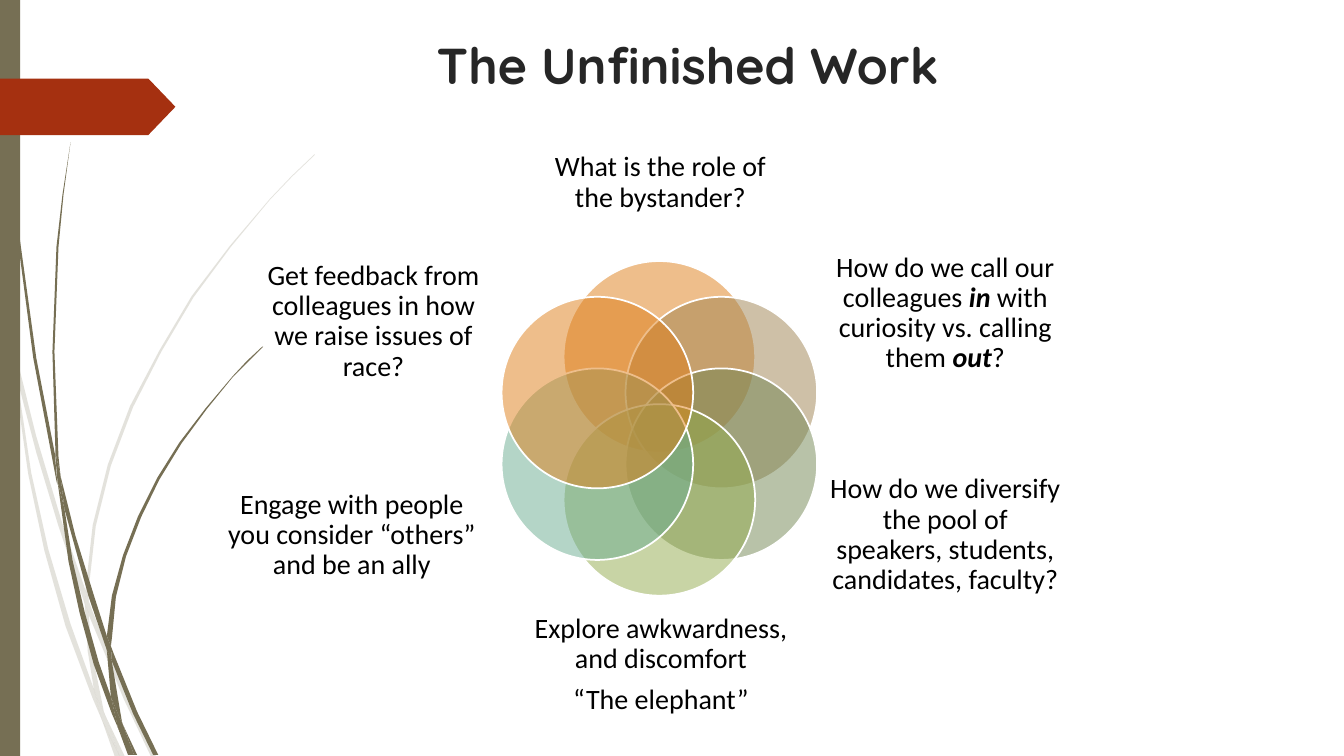
import math

from lxml import etree
from pptx import Presentation
from pptx.dml.color import RGBColor
from pptx.enum.shapes import MSO_SHAPE
from pptx.enum.text import MSO_ANCHOR, MSO_AUTO_SIZE, PP_ALIGN
from pptx.oxml.ns import qn
from pptx.util import Inches, Pt

RECTANGLE, PENTAGON, OVAL = MSO_SHAPE.RECTANGLE, MSO_SHAPE.PENTAGON, MSO_SHAPE.OVAL
TOP, MIDDLE = MSO_ANCHOR.TOP, MSO_ANCHOR.MIDDLE
CENTER, NO_FIT = PP_ALIGN.CENTER, MSO_AUTO_SIZE.NONE
TITLE_ONLY = 5

COLORS = {
    "stem": "766F54", "banner": "A53010", "title": "262626",
    "text": "000000", "outline": "FFFFFF", "orange": "DE7E18",
    "tan": "9F8351", "moss": "728653", "lime": "92AA4C", "teal": "6AAC91",
}

# Outlines of the grass blades, in inches.
PALE_BLADES = [
    [(.11, 3.5), (.09, 3.22), (0, 2.82), (0, 2.99), (.1, 3.44)],
    [(.58, 5.22), (.84, 5.99), (.85, 5.86), (.62, 5.2), (.36, 4.33), (.14, 3.45),
     (.17, 3.76), (.36, 4.49)],
    [(.92, 6.07), (.88, 5.96), (.88, 6.1), (1.23, 6.94), (1.5, 7.51),
     (1.55, 7.51), (1.27, 6.92)],
    [(1.19, 7.51), (1.24, 7.51), (1.05, 7.11)],
    [(.93, 6.83), (.7, 6.19), (.48, 5.45), (.31, 4.69), (.17, 3.76), (.11, 3.5),
     (.28, 4.7), (.44, 5.46), (.65, 6.21), (.92, 6.93), (1.01, 7.14), (.99, 7.07)],
    [(.84, 5.99), (.87, 6.46), (.93, 6.83), (.96, 6.92), (1.05, 7.11),
     (1.03, 7.06), (.91, 6.46), (.88, 6.1), (.88, 6.08)],
    [(.88, 5.84), (.95, 5.22), (1.1, 4.62), (1.32, 4.04), (1.6, 3.49),
     (1.92, 2.95), (2.29, 2.45), (2.68, 1.98), (2.9, 1.75), (3.12, 1.54),
     (3.12, 1.53), (2.89, 1.75), (2.68, 1.97), (2.28, 2.44), (1.9, 2.94),
     (1.58, 3.48), (1.29, 4.03), (1.07, 4.61), (.92, 5.21), (.85, 5.84),
     (.85, 5.86), (.88, 5.96)],
    [(1.01, 7.14), (1.14, 7.51), (1.19, 7.51)],
    [(.88, 6.08), (.88, 5.96), (.85, 5.86), (.84, 5.99)],
    [(.96, 6.92), (.93, 6.83), (.99, 7.07), (1.01, 7.14), (1.19, 7.51),
     (1.05, 7.11)],
]
DARK_BLADES = [
    [(.07, 1.1), (.17, 2.33), (.33, 3.55), (.56, 4.77), (.57, 4.81), (.55, 4.57),
     (.55, 4.53), (.36, 3.55), (.19, 2.32), (.08, 1.09), (.05, .48), (.03, 0),
     (.03, .48)],
    [(.88, 5.92), (1.06, 6.45), (1.06, 6.31), (.93, 5.9), (.75, 5.32), (.6, 4.72),
     (.64, 5.05)],
    [(1.13, 6.49), (1.1, 6.41), (1.11, 6.56), (1.32, 7.08), (1.52, 7.49),
     (1.57, 7.49), (1.36, 7.06)],
    [(1.1, 6.91), (.98, 6.57), (.84, 6.07), (.72, 5.56), (.64, 5.05), (.57, 4.77),
     (.68, 5.57), (.79, 6.08), (.93, 6.59), (1.11, 7.08), (1.17, 7.22),
     (1.16, 7.17)],
    [(.6, 4.72), (.58, 4.53), (.54, 3.49), (.58, 2.45), (.63, 1.93), (.7, 1.41),
     (.62, 1.93), (.56, 2.45), (.52, 3.49), (.55, 4.49)],
    [(1.33, 7.49), (1.36, 7.49), (1.22, 7.19)],
    [(.57, 4.77), (.64, 5.05), (.6, 4.72), (.55, 4.49), (.55, 4.53)],
    [(1.11, 6.33), (1.15, 5.92), (1.25, 5.52), (1.4, 5.13), (1.58, 4.76),
     (1.8, 4.4), (2.05, 4.06), (2.31, 3.74), (2.46, 3.59), (2.61, 3.44),
     (2.6, 3.44), (2.45, 3.58), (2.31, 3.73), (2.04, 4.05), (1.78, 4.39),
     (1.56, 4.74), (1.37, 5.12), (1.22, 5.51), (1.11, 5.91), (1.06, 6.31),
     (1.1, 6.41)],
    [(1.17, 7.22), (1.27, 7.49), (1.31, 7.49)],
    [(1.06, 6.45), (1.1, 6.91), (1.16, 7.06), (1.22, 7.19), (1.21, 7.16),
     (1.11, 6.56), (1.09, 6.51)],
    [(1.06, 6.45), (1.11, 6.56), (1.1, 6.41), (1.06, 6.31)],
    [(1.16, 7.06), (1.1, 6.91), (1.17, 7.22), (1.3, 7.49), (1.33, 7.49),
     (1.22, 7.19)],
]

# Clockwise from the top: petal colour, text box, paragraphs; *stars* mark emphasis.
PETALS = [
    ("orange", (5.36, 1.17, 2.38, 1.29), ["What is the role of the bystander?"]),
    ("tan", (8.25, 2.4, 2.25, 1.42),
     ["How do we call our colleagues *in *with curiosity vs. calling them *out*?"]),
    ("moss", (8.23, 4.52, 2.29, 1.58),
     ["How do we diversify the pool of speakers, students, candidates, faculty?"]),
    ("lime", (5.21, 5.95, 2.69, 1.29),
     ["Explore awkwardness, and discomfort", "“The elephant”"]),
    ("teal", (2.26, 4.52, 2.46, 1.58),
     ["Engage with people you consider “others” and be an ally"]),
    ("orange", (2.58, 2.4, 2.25, 1.58),
     ["Get feedback from colleagues in how we raise issues of race?"]),
]
FLOWER_X, FLOWER_Y, ORBIT, DIAMETER = 6.54, 4.25, .71, 1.9


class SlideBuilder:
    body_font, body_size = "Calibri", Pt(20)
    title_font, title_size = "Quicksand", Pt(36)

    def __init__(self, slide):
        self.slide = slide

    def color(self, name):
        return RGBColor.from_string(COLORS[name])

    def paint(self, shape, fill, opacity=100, outline=None):
        shape.shadow.inherit = False
        shape.fill.solid()
        shape.fill.fore_color.rgb = self.color(fill)
        if opacity < 100:
            srgb = shape.fill._xPr.find(qn("a:solidFill"))[0]
            etree.SubElement(srgb, qn("a:alpha"), val=str(opacity * 1000))
        if outline:
            shape.line.color.rgb = self.color(outline)
            shape.line.width = Pt(1.25)
        else:
            shape.line.fill.background()

    def shape(self, kind, box, fill, opacity=100, outline=None):
        shape = self.slide.shapes.add_shape(kind, *map(Inches, box))
        self.paint(shape, fill, opacity, outline)
        return shape

    def blade(self, outline, opacity=100):
        start, *others = [(Inches(x), Inches(y)) for x, y in outline]
        builder = self.slide.shapes.build_freeform(*start)
        builder.add_line_segments(others, close=True)
        self.paint(builder.convert_to_shape(), "stem", opacity)

    def title(self, text, box):
        title = self.slide.shapes.title
        title.left, title.top, title.width, title.height = map(Inches, box)
        frame = title.text_frame
        frame.text = text
        frame.auto_size, frame.vertical_anchor = NO_FIT, TOP
        paragraph = frame.paragraphs[0]
        paragraph.alignment = CENTER
        font = paragraph.runs[0].font
        font.name, font.size, font.bold = self.title_font, self.title_size, True
        font.color.rgb = self.color("title")

    def label(self, paragraphs, box):
        frame = self.slide.shapes.add_textbox(*map(Inches, box)).text_frame
        frame.word_wrap, frame.vertical_anchor = True, MIDDLE
        frame.margin_left = frame.margin_right = 0
        frame.margin_top = frame.margin_bottom = 0
        for index, text in enumerate(paragraphs):
            paragraph = frame.add_paragraph() if index else frame.paragraphs[0]
            paragraph.alignment = CENTER
            paragraph.line_spacing, paragraph.space_after = .9, Pt(7)
            for part, words in enumerate(text.split("*")):
                run = paragraph.add_run()
                run.text = words
                font = run.font
                font.name, font.size = self.body_font, self.body_size
                font.bold = font.italic = part % 2 == 1
                font.color.rgb = self.color("text")


def main():
    deck = Presentation()
    deck.slide_width, deck.slide_height = Inches(13.33), Inches(7.5)
    builder = SlideBuilder(deck.slides.add_slide(deck.slide_layouts[TITLE_ONLY]))

    for outline in PALE_BLADES:
        builder.blade(outline, opacity=20)
    for outline in DARK_BLADES:
        builder.blade(outline)
    builder.shape(RECTANGLE, (0, 0, .2, 7.5), "stem")
    banner = builder.shape(PENTAGON, (0, .78, 1.74, .56), "banner")
    banner.adjustments[0] = .48
    builder.title("The Unfinished Work", (1.7, .29, 10.24, .85))

    for index, (fill, text_box, paragraphs) in enumerate(PETALS):
        angle = math.radians(60 * index - 90)
        left = FLOWER_X + ORBIT * math.cos(angle) - DIAMETER / 2
        top = FLOWER_Y + ORBIT * math.sin(angle) - DIAMETER / 2
        builder.shape(OVAL, (left, top, DIAMETER, DIAMETER), fill, 50, "outline")
        builder.label(paragraphs, text_box)

    deck.save("out.pptx")


if __name__ == "__main__":
    main()
